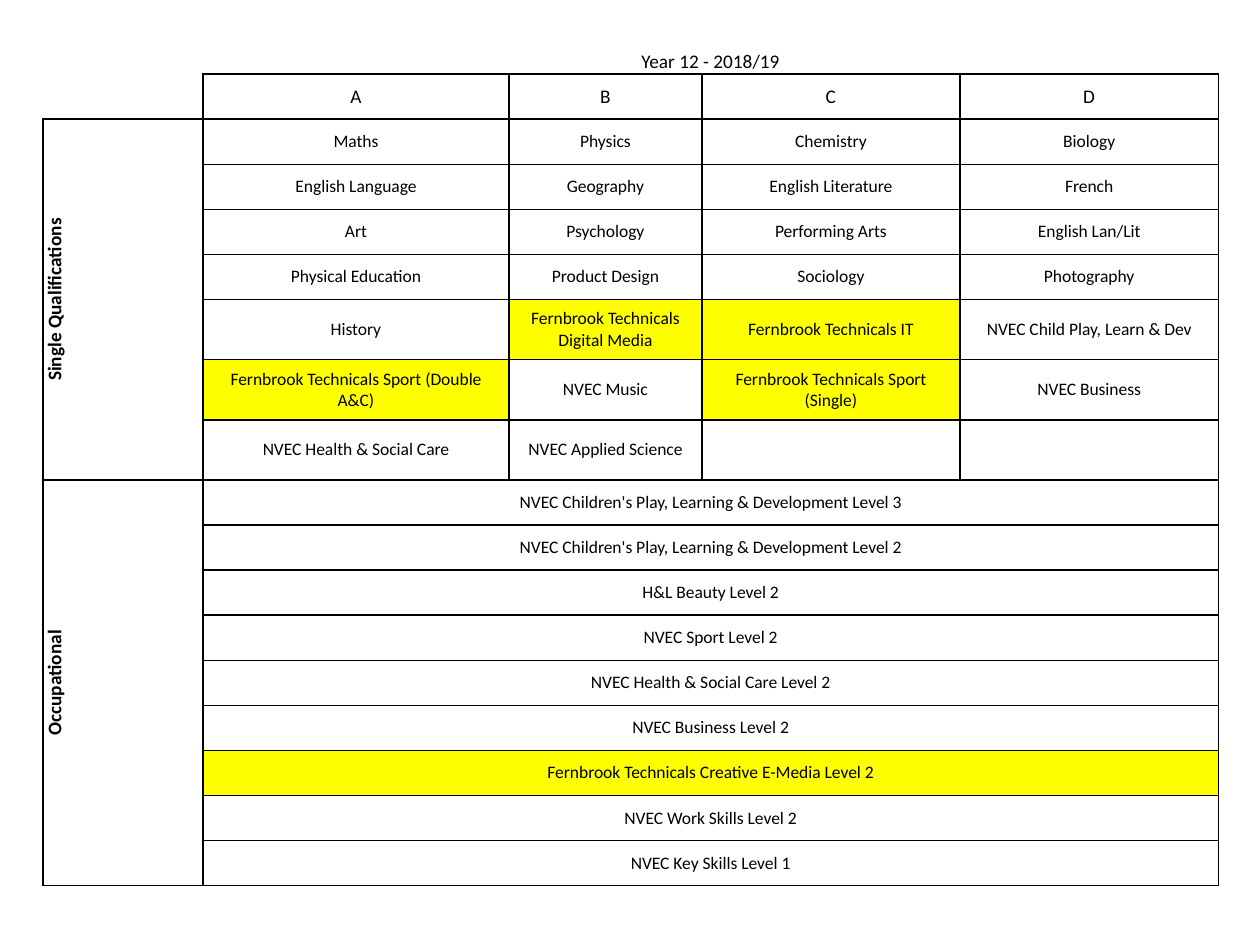
"""Build the Year 12 option blocks slide."""
from lxml import etree
from pptx import Presentation
from pptx.dml.color import RGBColor
from pptx.enum.text import MSO_ANCHOR, PP_ALIGN
from pptx.oxml.ns import qn
from pptx.util import Inches, Pt

CENTER = PP_ALIGN.CENTER
MIDDLE, BOTTOM = MSO_ANCHOR.MIDDLE, MSO_ANCHOR.BOTTOM
BLACK = RGBColor(0, 0, 0)
WHITE = RGBColor(255, 255, 255)
YELLOW = RGBColor(255, 255, 0)

TITLE = "Year 12 - 2018/19"
BLOCKS = ["A", "B", "C", "D"]
SINGLES = [
    ["Maths", "Physics", "Chemistry", "Biology"],
    ["English Language", "Geography", "English Literature", "French"],
    ["Art", "Psychology", "Performing Arts", "English Lan/Lit"],
    ["Physical Education", "Product Design", "Sociology", "Photography"],
    ["History", "Fernbrook Technicals Digital Media", "Fernbrook Technicals IT",
     "NVEC Child Play, Learn & Dev"],
    ["Fernbrook Technicals Sport (Double A&C)", "NVEC Music",
     "Fernbrook Technicals Sport (Single)", "NVEC Business"],
    ["NVEC Health & Social Care", "NVEC Applied Science", "", ""],
]
COURSES = [
    "NVEC Children's Play, Learning & Development Level 3",
    "NVEC Children's Play, Learning & Development Level 2",
    "H&L Beauty Level 2",
    "NVEC Sport Level 2",
    "NVEC Health & Social Care Level 2",
    "NVEC Business Level 2",
    "Fernbrook Technicals Creative E-Media Level 2",
    "NVEC Work Skills Level 2",
    "NVEC Key Skills Level 1",
]
WIDTHS = [1.27, 2.43, 1.53, 2.05, 2.05]
HEIGHT = 6.8
UNITS = [1] * 6 + [4 / 3] * 3 + [1] * 9
FIRST = 2
SPLIT = FIRST + len(SINGLES)
LAST = SPLIT + len(COURSES) - 1


class Deck:
    """Hold the style and the current slide."""

    def __init__(self):
        self.prs = Presentation()
        self.prs.slide_width, self.prs.slide_height = Inches(10), Inches(7.5)
        self.slide = self.prs.slides.add_slide(self.prs.slide_layouts[6])
        self.font = "Calibri"
        self.inset = Inches(0.07)

    def grid(self, left, top, widths, heights):
        """Add a plain table with the given columns and rows."""
        frame = self.slide.shapes.add_table(
            len(heights), len(widths), Inches(left), Inches(top),
            Inches(sum(widths)), Inches(sum(heights)))
        table = frame.table
        table.first_row = table.horz_banding = False
        for col, width in zip(table.columns, widths):
            col.width = Inches(width)
        for row, height in zip(table.rows, heights):
            row.height = Inches(height)
        return table

    def cell(self, cell, sides):
        """Fill a cell white and rule the named sides."""
        cell.fill.solid()
        cell.fill.fore_color.rgb = WHITE
        cell.margin_left = cell.margin_right = self.inset
        cell.margin_top = cell.margin_bottom = 0
        props = cell._tc.get_or_add_tcPr()
        for spot, side in enumerate("LRTB"):
            line = etree.Element(qn(f"a:ln{side}"), w=str(Pt(1)))
            if side in sides:
                fill = etree.SubElement(line, qn("a:solidFill"))
                etree.SubElement(fill, qn("a:srgbClr"), val=str(BLACK))
            else:
                etree.SubElement(line, qn("a:noFill"))
            props.insert(spot, line)

    def text(self, cell, words, size=10, bold=False, anchor=MIDDLE):
        """Write centred words in a cell, marking the changed courses."""
        cell.vertical_anchor = anchor
        if words.startswith("Fernbrook"):
            cell.fill.fore_color.rgb = YELLOW
        para = cell.text_frame.paragraphs[0]
        para.text = words
        para.alignment = CENTER
        para.font.name, para.font.size = self.font, Pt(size)
        para.font.bold, para.font.color.rgb = bold, BLACK

    def label(self, table, first, last, words):
        """Merge part of the first column under an upright label."""
        cell = table.cell(first, 0)
        cell.merge(table.cell(last, 0))
        self.text(cell, words, 11, True)
        cell._tc.get_or_add_tcPr().set("vert", "vert270")

    def band(self, table, row, words, **style):
        """Merge a row across all blocks and write its words."""
        cell = table.cell(row, 1)
        cell.merge(table.cell(row, len(WIDTHS) - 1))
        self.text(cell, words, **style)


def sides(row, col):
    """Name the ruled sides of the cell at a row and column."""
    if row == 0:
        return "B" if col else ""
    return "RB" if row == 1 and col == 0 else "LRTB"


def main():
    """Lay out the option blocks and save the deck."""
    deck = Deck()
    unit = HEIGHT / sum(UNITS)
    table = deck.grid(0.34, 0.23, WIDTHS, [unit * share for share in UNITS])
    for row in range(len(UNITS)):
        for col in range(len(WIDTHS)):
            deck.cell(table.cell(row, col), sides(row, col))

    deck.band(table, 0, TITLE, size=11, anchor=BOTTOM)
    for row, names in enumerate([BLOCKS] + SINGLES, 1):
        for col, name in enumerate(names, 1):
            if name:
                deck.text(table.cell(row, col), name, 11 if row == 1 else 10)
    for row, name in enumerate(COURSES, SPLIT):
        deck.band(table, row, name)
    deck.label(table, FIRST, SPLIT - 1, "Single Qualifications")
    deck.label(table, SPLIT, LAST, "Occupational")
    deck.prs.save("out.pptx")


if __name__ == "__main__":
    main()
